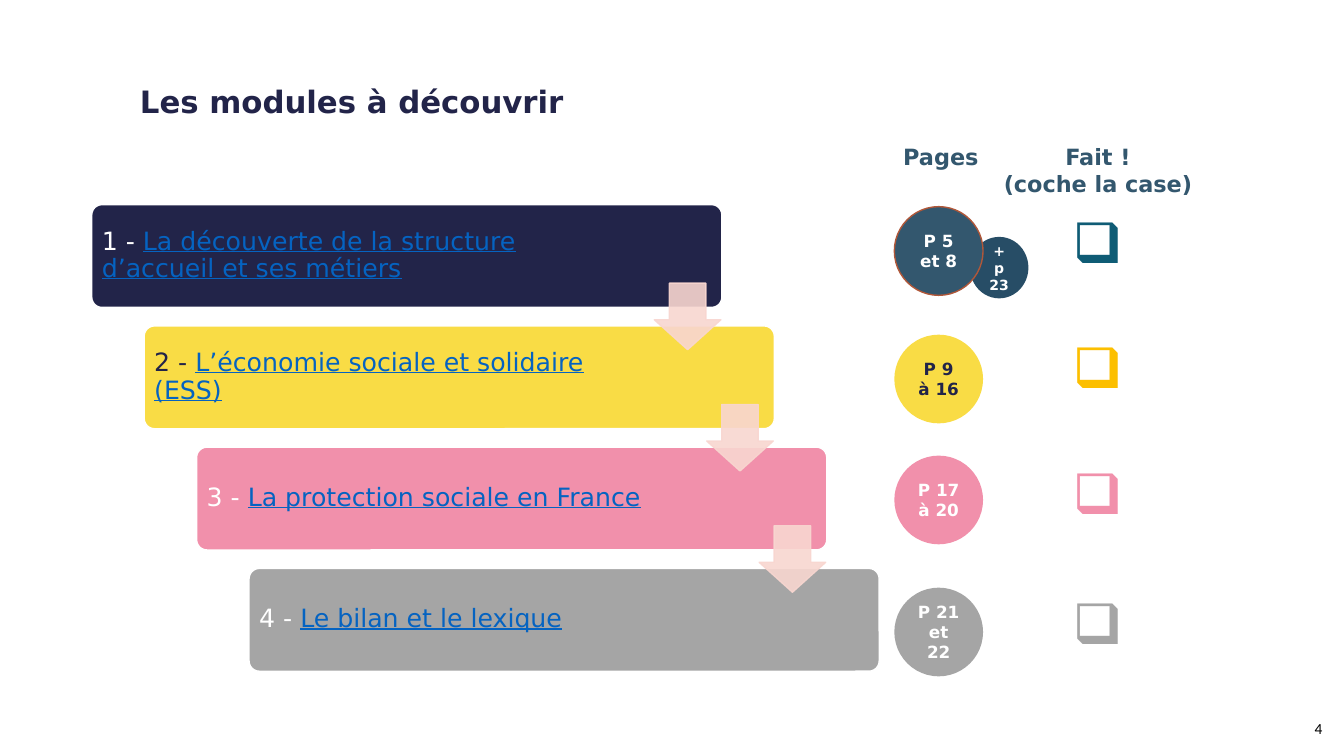
from pptx import Presentation
from pptx.dml.color import RGBColor
from pptx.enum.shapes import MSO_SHAPE
from pptx.enum.text import MSO_ANCHOR, PP_ALIGN
from pptx.oxml.ns import qn
from pptx.util import Inches, Pt
from lxml import etree

OVAL, BAR, ARROW = MSO_SHAPE.OVAL, MSO_SHAPE.ROUNDED_RECTANGLE, MSO_SHAPE.DOWN_ARROW
MIDDLE, TOP = MSO_ANCHOR.MIDDLE, MSO_ANCHOR.TOP
CENTER, LEFT = PP_ALIGN.CENTER, PP_ALIGN.LEFT

COLORS = {
    "navy": "222449", "yellow": "F9DC45", "pink": "F190AB", "grey": "A5A5A5",
    "slate": "33576E", "deep": "274D66", "rust": "B05739", "blush": "F8D6D0",
    "teal": "0F5C75", "amber": "FCBF00", "link": "0563C1",
    "white": "FFFFFF", "black": "000000",
}
FONT = "DejaVu Sans"

# Staircase of modules: first bar, then one step per module
BAR_BOX = (0.91, 2.03, 6.25, 1.02)
STEP_X, STEP_Y = 0.52, 1.203
ARROW_SIZE = 0.66
CIRCLE_X, CIRCLE_SIZE = 8.87, 0.88
CHECK_X = 10.54

# title, bar colour, text colour, pages, circle colour, circle top, box colour, box top
MODULES = [
    ("La découverte de la structure d’accueil et ses métiers",
     "navy", "white", "P 5 et 8", "slate", 2.05, "teal", 2.17),
    ("L’économie sociale et solidaire (ESS)",
     "yellow", "navy", "P 9 à 16", "yellow", 3.32, "amber", 3.41),
    ("La protection sociale en France",
     "pink", "white", "P 17 à 20", "pink", 4.52, "pink", 4.66),
    ("Le bilan et le lexique",
     "grey", "white", "P 21 et 22", "grey", 5.83, "grey", 5.95),
]


def rgb(name):
    return RGBColor.from_string(COLORS[name])


def add_run(p, text, color, **formats):
    r = p.add_run()
    r.text = text
    for key, value in {"name": FONT, **formats}.items():
        setattr(r.font, key, value)
    r.font.color.rgb = rgb(color)


def add_shape(s, kind, box, fill, line=None, alpha=None):
    sp = s.shapes.add_shape(kind, *map(Inches, box))
    sp.shadow.inherit = False
    sp.fill.solid()
    sp.fill.fore_color.rgb = rgb(fill)
    if line:
        sp.line.color.rgb = rgb(line)
        sp.line.width = Pt(1)
    else:
        sp.line.fill.background()
    if alpha:
        for clr in sp._element.spPr.iter(qn("a:srgbClr")):
            etree.SubElement(clr, qn("a:alpha"), val=str(alpha * 1000))
    return sp


def add_text(s, box, anchor=TOP, inset=None):
    tf = s.shapes.add_textbox(*map(Inches, box)).text_frame
    tf.word_wrap = True
    tf.vertical_anchor = anchor
    if inset:
        for side in ("left", "top", "right", "bottom"):
            setattr(tf, f"margin_{side}", Inches(inset))
    return tf


def label(s, box, lines, color, size, align=LEFT, bold=True, name=FONT):
    tf = add_text(s, box)
    for i, line in enumerate(lines):
        p = tf.add_paragraph() if i else tf.paragraphs[0]
        p.alignment = align
        add_run(p, line, color, size=Pt(size), bold=bold, name=name)


def module_bar(s, box, number, title, fill, color):
    x, y, w, h = box
    add_shape(s, BAR, box, fill, "white").adjustments[0] = 0.1
    tf = add_text(s, (x + 0.03, y + 0.03, w * 0.8, h - 0.06), MIDDLE, 0.07)
    p = tf.paragraphs[0]
    p.line_spacing = 0.9
    add_run(p, f"{number} - ", color, size=Pt(18))
    add_run(p, title, "link", size=Pt(18), underline=True)


def step_arrow(s, box):
    sp = add_shape(s, ARROW, box, "blush", "blush", alpha=90)
    sp.adjustments[0], sp.adjustments[1] = 0.55, 0.45


def page_circle(s, box, text, fill, color="white", size=12, line=None):
    tf = add_shape(s, OVAL, box, fill, line).text_frame
    tf.word_wrap = True
    tf.vertical_anchor = MIDDLE
    p = tf.paragraphs[0]
    p.alignment = CENTER
    add_run(p, text, color, size=Pt(size), bold=True)


def check_box(s, box, color):
    p = add_text(s, box).paragraphs[0]
    p.line_spacing = 0.9
    pPr = p._p.get_or_add_pPr()
    pPr.set("marL", str(Inches(0.38)))
    pPr.set("indent", str(-Inches(0.38)))
    bu_clr = etree.SubElement(pPr, qn("a:buClr"))
    etree.SubElement(bu_clr, qn("a:srgbClr"), val=COLORS[color])
    etree.SubElement(pPr, qn("a:buChar"), char="❑")
    add_run(p, ".", "white", size=Pt(40), name="Calibri")


def build_modules(s):
    x0, y0, w, h = BAR_BOX
    # Bars
    for i, (title, fill, color, *_) in enumerate(MODULES):
        module_bar(s, (x0 + i * STEP_X, y0 + i * STEP_Y, w, h), i + 1, title, fill, color)
    # Arrows between consecutive bars
    for i in range(len(MODULES) - 1):
        step_arrow(s, (x0 + w - ARROW_SIZE - 0.01 + i * STEP_X,
                       y0 + 0.78 + i * STEP_Y, ARROW_SIZE, ARROW_SIZE))


def build_tracking(s):
    # Column headings
    label(s, (8.86, 1.37, 0.98, 0.61), ["Pages"], "slate", 16)
    label(s, (9.84, 1.37, 2.1, 0.61), ["Fait !", "(coche la case)"], "slate", 16, CENTER)
    # Extra page, tucked behind the first circle
    page_circle(s, (9.62, 2.35, 0.58, 0.61), "+ p 23", "deep", size=10)
    # Pages and tick boxes
    for i, (_, _, color, pages, fill, top, box_color, box_top) in enumerate(MODULES):
        page_circle(s, (CIRCLE_X, top, CIRCLE_SIZE, CIRCLE_SIZE), pages, fill, color,
                    line=None if i else "rust")
        check_box(s, (CHECK_X, box_top, 1.56, 0.77), box_color)


def main():
    prs = Presentation()
    prs.slide_width, prs.slide_height = Inches(13.33), Inches(7.5)
    s = prs.slides.add_slide(prs.slide_layouts[6])
    # Title
    label(s, (1.29, 0.77, 5.7, 0.77), ["Les modules à découvrir"], "navy", 22)
    build_modules(s)
    build_tracking(s)
    # Page number
    label(s, (12.94, 7.08, 0.33, 0.29), ["4"], "black", 11, bold=False, name="Calibri")
    prs.save("out.pptx")


if __name__ == "__main__":
    main()
